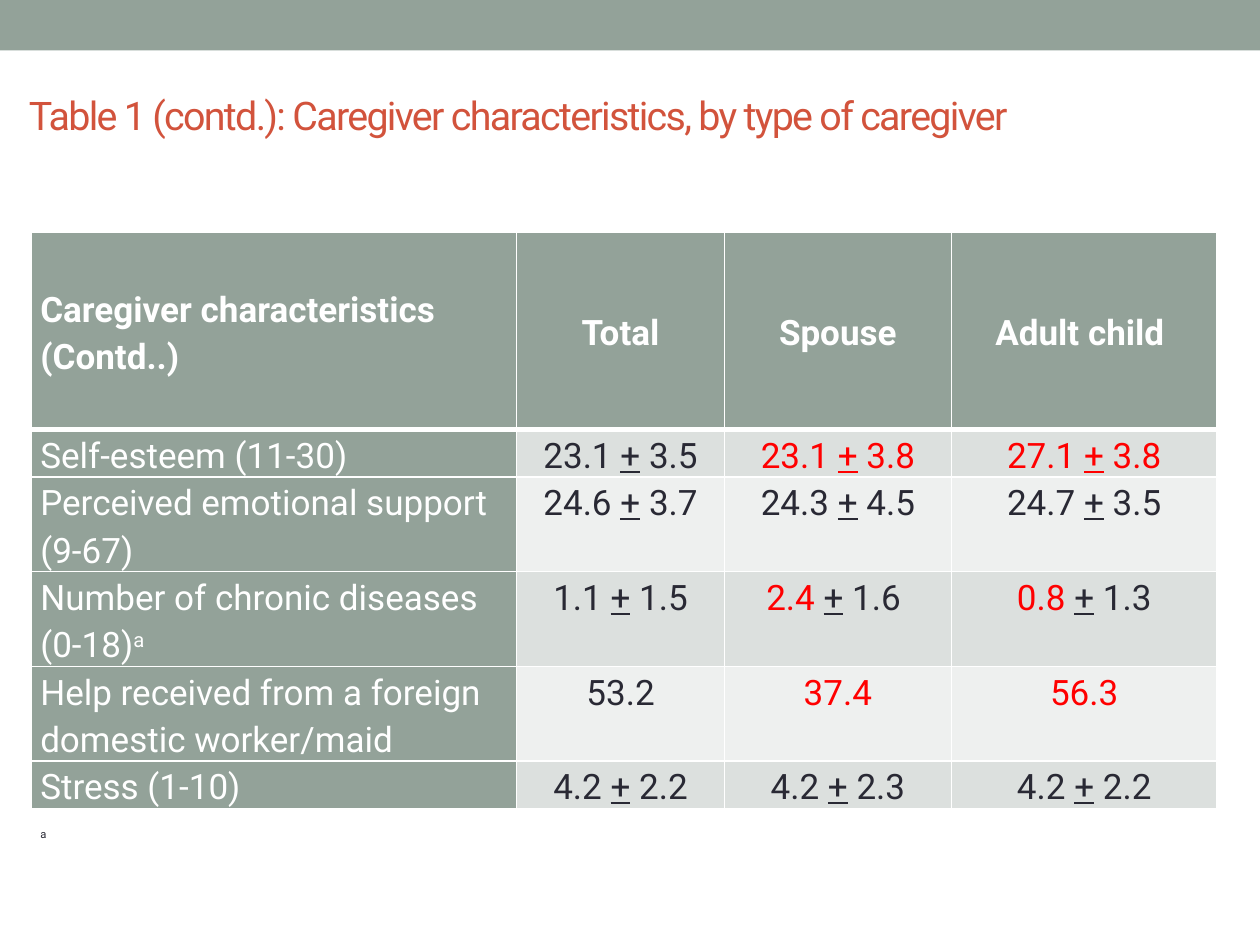
"""Build a slide with a table of caregiver characteristics by type of caregiver."""
from lxml.etree import SubElement
from pptx import Presentation
from pptx.dml.color import RGBColor
from pptx.enum.shapes import MSO_SHAPE as Shape
from pptx.enum.text import MSO_ANCHOR as Anchor, PP_ALIGN as Align
from pptx.oxml.ns import qn
from pptx.util import Inches, Pt

SAGE, WHITE, INK, RED, RUST = "93A299", "FFFFFF", "292934", "FF0000", "D2533C"
BANDS = ["DCE0DE", "EEF0EF"]
FONT = "Roboto"
TITLE = "Table 1 (contd.): Caregiver characteristics, by type of caregiver"
HEADERS = ["Caregiver characteristics (Contd..)", "Total", "Spouse", "Adult child "]
ROWS = [
    ("Self-esteem (11-30)", "", 1,
     [("23.1", "3.5", INK, INK), ("23.1", "3.8", RED, RED), ("27.1", "3.8", RED, RED)]),
    ("Perceived emotional support (9-67)", "", 2,
     [("24.6", "3.7", INK, INK), ("24.3", "4.5", INK, INK), ("24.7", "3.5", INK, INK)]),
    ("Number of chronic diseases (0-18)", "a", 2,
     [("1.1", "1.5", INK, INK), ("2.4", "1.6 ", RED, INK), ("0.8", "1.3", RED, INK)]),
    ("Help received from a foreign domestic worker/maid", "", 2,
     [("53.2", "", INK, INK), ("37.4", "", RED, RED), ("56.3", "", RED, RED)]),
    ("Stress (1-10)", "", 1,
     [("4.2", "2.2", INK, INK), ("4.2", "2.3", INK, INK), ("4.2", "2.2", INK, INK)]),
]
COLUMN_WIDTHS = [3.85, 1.65, 1.8, 2.11]
TABLE_LEFT, TABLE_TOP = 0.25, 1.84
HEADER_HEIGHT, LINE_HEIGHT = 1.57, 0.31
NOTE_TOP = 6.5


def rgb(value):
    return RGBColor.from_string(value)


def add_span(para, text, color, size=20, bold=False, underline=False, raised=False):
    span = para.add_run()
    span.text = text
    font = span.font
    font.name, font.size, font.bold, font.underline = FONT, Pt(size), bold, underline
    font.color.rgb = rgb(color)
    if raised:
        font._element.set("baseline", "30000")
    return span


def set_borders(cell, top, bottom):
    properties = cell._tc.get_or_add_tcPr()
    widths = {"a:lnL": 1, "a:lnR": 1, "a:lnT": top, "a:lnB": bottom}
    for index, (tag, width) in enumerate(widths.items()):
        line = SubElement(properties, qn(tag), w=str(Pt(width)))
        fill = SubElement(line, qn("a:solidFill"))
        SubElement(fill, qn("a:srgbClr"), val=WHITE)
        properties.insert(index, line)


def style_cell(cell, fill, row, column):
    cell.fill.solid()
    cell.fill.fore_color.rgb = rgb(fill)
    cell.margin_left = cell.margin_right = Inches(0.07)
    cell.margin_top = cell.margin_bottom = 0
    cell.vertical_anchor = Anchor.TOP if row else Anchor.MIDDLE
    set_borders(cell, 3 if row == 1 else 1, 1 if row else 3)
    para = cell.text_frame.paragraphs[0]
    para.line_spacing = 1.15
    para.alignment = Align.CENTER if column else Align.LEFT
    return para


def add_value(para, mean, deviation, mean_color, deviation_color):
    if not deviation:
        add_span(para, mean, mean_color)
        return
    add_span(para, mean + " ", mean_color)
    add_span(para, "+", deviation_color, underline=True)
    add_span(para, " " + deviation, deviation_color)


def add_characteristics(page):
    heights = [HEADER_HEIGHT] + [LINE_HEIGHT * lines for _, _, lines, _ in ROWS]
    table = page.shapes.add_table(
        len(heights), len(HEADERS), Inches(TABLE_LEFT), Inches(TABLE_TOP),
        Inches(sum(COLUMN_WIDTHS)), Inches(sum(heights))).table
    for column, width in zip(table.columns, COLUMN_WIDTHS):
        column.width = Inches(width)
    for row, height in zip(table.rows, heights):
        row.height = Inches(height)
    for column, header in enumerate(HEADERS):
        para = style_cell(table.cell(0, column), SAGE, 0, column)
        add_span(para, header, WHITE, bold=True)
    for row, (label, mark, _, values) in enumerate(ROWS, 1):
        para = style_cell(table.cell(row, 0), SAGE, row, 0)
        add_span(para, label, WHITE)
        if mark:
            add_span(para, mark, WHITE, raised=True)
        for column, value in enumerate(values, 1):
            band = BANDS[(row - 1) % 2]
            add_value(style_cell(table.cell(row, column), band, row, column), *value)


def main():
    deck = Presentation()
    deck.slide_width, deck.slide_height = Inches(10), Inches(7.5)
    page = deck.slides.add_slide(deck.slide_layouts[5])

    strip = page.shapes.add_shape(Shape.RECTANGLE, 0, 0, Inches(10), Inches(0.4))
    strip.shadow.inherit = False
    strip.fill.solid()
    strip.fill.fore_color.rgb = rgb(SAGE)
    strip.line.fill.background()

    add_characteristics(page)

    note = page.shapes.add_textbox(
        Inches(TABLE_LEFT), Inches(NOTE_TOP), Inches(8.92), Inches(0.22))
    note.text_frame.word_wrap = True
    note.text_frame.margin_left = Inches(0.07)
    add_span(note.text_frame.paragraphs[0], "a", INK, size=11, raised=True)

    title = page.shapes.title
    title.left, title.top = Inches(0.13), Inches(0.48)
    title.width, title.height = Inches(9.83), Inches(0.67)
    title.text_frame.vertical_anchor = Anchor.BOTTOM
    para = title.text_frame.paragraphs[0]
    para.alignment = Align.LEFT
    span = add_span(para, TITLE, RUST, size=22.5)
    span.font._element.set("spc", "-100")

    deck.save("out.pptx")


if __name__ == "__main__":
    main()
